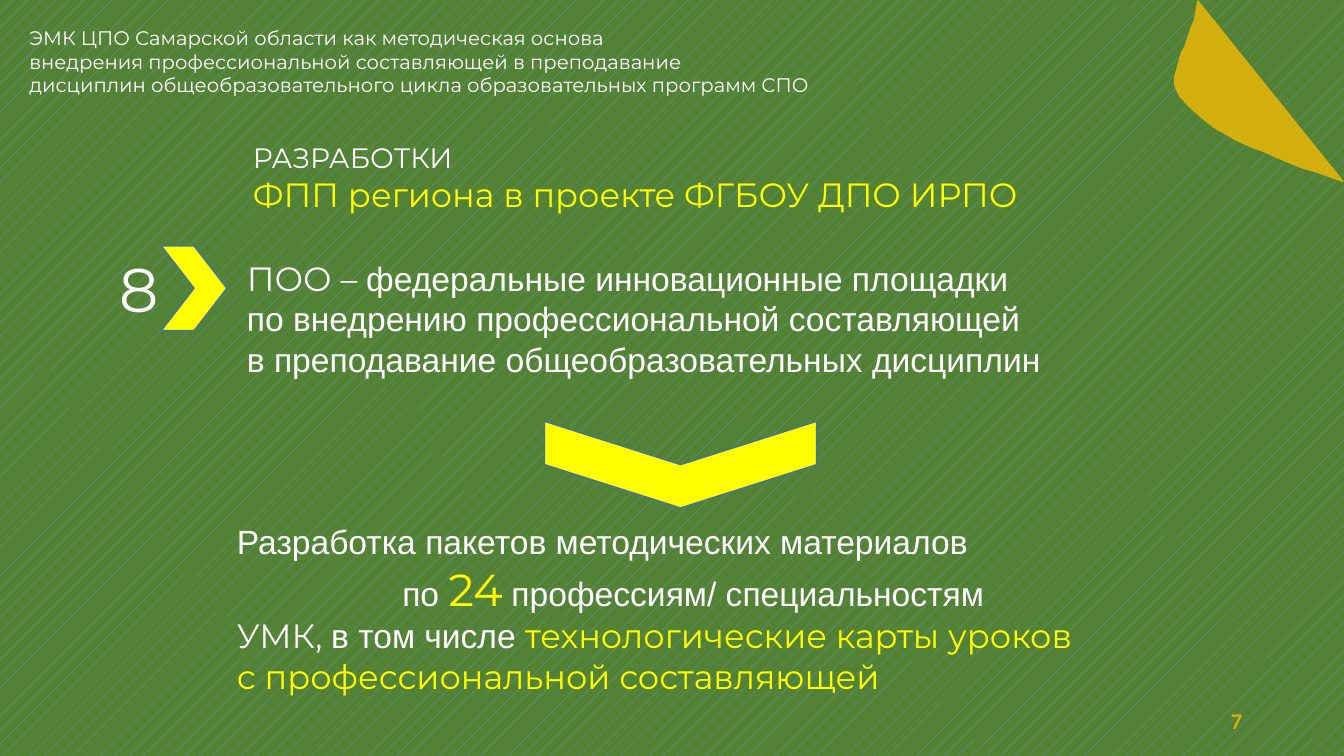
from dataclasses import dataclass

from lxml import etree
from pptx import Presentation
from pptx import util as u
from pptx.dml.color import RGBColor
from pptx.enum import dml, shapes, text
from pptx.oxml.ns import qn


@dataclass(frozen=True)
class Theme:
    """Colours, fonts and type sizes of the slide."""
    green: str = "548235"
    hatch: str = "5B9BD5"
    white: str = "FFFFFF"
    yellow: str = "FFFF00"
    gold: str = "FFC000"
    ochre: str = "D3B00E"
    outline: str = "43739E"
    display: str = "Montserrat"
    plain: str = "Arial"
    numeral: str = "Calibri"
    small: int = 14
    page: int = 16
    label: int = 20
    main: int = 24
    accent: int = 32
    huge: int = 44


THEME = Theme()
LEFT, CENTER, RIGHT = text.PP_ALIGN.LEFT, text.PP_ALIGN.CENTER, text.PP_ALIGN.RIGHT
LEAF_EDGE = [
    (23, 0), (21, 12), (20, 18), (16, 28), (10, 46), (7, 51), (5, 58), (0, 76), (0, 83),
    (2, 88), (5, 94), (11, 101), (17, 107), (24, 113), (31, 119), (40, 126), (49, 131),
    (61, 138), (79, 146), (88, 149), (101, 155), (113, 160), (125, 165), (139, 169),
    (156, 175), (167, 179),
]


def rgb(code):
    """Return a colour from its hex code."""
    return RGBColor.from_string(code)


def assign(target, values):
    """Set the attributes of target from a dict."""
    for name, value in values.items():
        setattr(target, name, value)


def place(part, box):
    """Move a part to its box, given in inches."""
    assign(part, dict(zip(("left", "top", "width", "height"), map(u.Inches, box))))


def run_of(words, size=THEME.main, face=THEME.display, color=THEME.white, bold=False):
    """Describe one run of text."""
    return words, {"size": u.Pt(size), "name": face, "bold": bold}, color


def write(holder, lines, wrap=False, anchor=text.MSO_ANCHOR.TOP, fit=text.MSO_AUTO_SIZE.SHAPE_TO_FIT_TEXT):
    """Fill a text holder with (alignment, runs) lines."""
    frame = holder.text_frame
    assign(frame, {"word_wrap": wrap, "vertical_anchor": anchor, "auto_size": fit})
    for index, (alignment, runs) in enumerate(lines):
        paragraph = frame.paragraphs[0] if index == 0 else frame.add_paragraph()
        if holder.is_placeholder:
            properties = paragraph._p.get_or_add_pPr()
            properties.set("marL", "0")
            properties.set("indent", "0")
            etree.SubElement(properties, qn("a:buNone"))
        assign(paragraph, {"alignment": alignment, "space_before": u.Pt(0)})
        for words, font, color in runs:
            run = paragraph.add_run()
            run.text = words
            assign(run.font, font)
            run.font.color.rgb = rgb(color)


def textbox(slide, box, lines, **options):
    """Add a text box with its lines."""
    holder = slide.shapes.add_textbox(*map(u.Inches, box))
    write(holder, lines, **options)
    place(holder, box)


def paint(part, fill, line):
    """Give a shape a flat fill and a thin outline."""
    part.shadow.inherit = False
    part.fill.solid()
    part.fill.fore_color.rgb = rgb(fill)
    part.line.color.rgb = rgb(line)
    part.line.width = u.Pt(1)


def chevron(slide, box, rotation=0):
    """Add a yellow chevron."""
    arrow = slide.shapes.add_shape(shapes.MSO_SHAPE.CHEVRON, *map(u.Inches, box))
    arrow.rotation = rotation
    paint(arrow, THEME.yellow, THEME.outline)


def backdrop(slide):
    """Set the hatched green background."""
    fill = slide.background.fill
    fill.patterned()
    fill.pattern = dml.MSO_PATTERN.PERCENT_5
    fill.fore_color.rgb = rgb(THEME.hatch)
    fill.back_color.rgb = rgb(THEME.green)


def corner_leaf(slide, left, top):
    """Draw the translucent leaf in the corner."""
    builder = slide.shapes.build_freeform(*LEAF_EDGE[0], scale=u.Inches(0.01))
    builder.add_line_segments(LEAF_EDGE[1:], close=True)
    leaf = builder.convert_to_shape(u.Inches(left), u.Inches(top))
    paint(leaf, THEME.gold, THEME.ochre)
    tint = leaf.fill._xPr.find(qn("a:solidFill"))[0]
    etree.SubElement(tint, qn("a:alpha"), val="74000")


def header(slide, box):
    """Write the topic of the talk in the title."""
    title = slide.shapes.title
    place(title, box)
    write(title, [(LEFT, [run_of(words, THEME.small)]) for words in (
        "ЭМК ЦПО Самарской области как методическая основа",
        "внедрения профессиональной составляющей в преподавание",
        "дисциплин общеобразовательного цикла образовательных программ СПО",
    )], wrap=True)


def section_heading(slide, box):
    """Write the heading of the section."""
    textbox(slide, box, [
        (LEFT, [run_of("РАЗРАБОТКИ", THEME.label)]),
        (LEFT, [run_of("ФПП региона в проекте ФГБОУ ДПО ИРПО", color=THEME.yellow)]),
    ])


def platforms(slide, box):
    """Show the number of platforms, its arrow and the explanation."""
    left, top, width, height = box
    chevron(slide, (left + 0.51, top, 0.65, 0.84))
    textbox(slide, (left + 1.26, top + 0.07, width - 1.26, height - 0.07), [
        (LEFT, [run_of("ПОО – "), run_of("федеральные инновационные площадки", face=THEME.plain)]),
        (LEFT, [run_of("по внедрению профессиональной составляющей", face=THEME.plain)]),
        (LEFT, [run_of("в преподавание общеобразовательных дисциплин", face=THEME.plain)]),
    ])
    textbox(slide, (left, top, 0.61, 0.84), [(LEFT, [run_of("8", THEME.huge)])])


def materials(slide, box):
    """List the packages of materials in the body."""
    body = slide.placeholders[1]
    place(body, box)
    write(body, [
        (LEFT, [run_of("Разработка пакетов методических материалов", face=THEME.plain)]),
        (CENTER, [
            run_of("по ", face=THEME.plain),
            run_of("24", THEME.accent, color=THEME.yellow),
            run_of(" "),
            run_of("профессиям/ специальностям", face=THEME.plain),
        ]),
        (LEFT, [
            run_of("УМК, "),
            run_of("в том числе ", face=THEME.plain),
            run_of("технологические карты уроков", color=THEME.yellow),
        ]),
        (LEFT, [run_of("с профессиональной составляющей", color=THEME.yellow)]),
    ])


def page_number(slide, box):
    """Write the page number."""
    number = run_of("7", THEME.page, THEME.numeral, THEME.ochre, True)
    textbox(slide, box, [(RIGHT, [number])], wrap=True,
            anchor=text.MSO_ANCHOR.MIDDLE, fit=text.MSO_AUTO_SIZE.NONE)


def main():
    """Build and save the slide."""
    deck = Presentation()
    assign(deck, {"slide_width": u.Inches(13.33), "slide_height": u.Inches(7.5)})
    slide = deck.slides.add_slide(deck.slide_layouts[1])
    backdrop(slide)
    corner_leaf(slide, 11.65, 0.01)
    header(slide, (0.19, 0.21, 12.39, 0.81))
    section_heading(slide, (2.41, 1.34, 8.24, 0.84))
    platforms(slide, (1.09, 2.44, 9.51, 1.38))
    chevron(slide, (6.32, 3.26, 0.86, 2.7), rotation=90)
    materials(slide, (2.25, 5.12, 9.25, 1.85))
    page_number(slide, (9.42, 6.95, 3, 0.4))
    deck.save("out.pptx")


if __name__ == "__main__":
    main()
